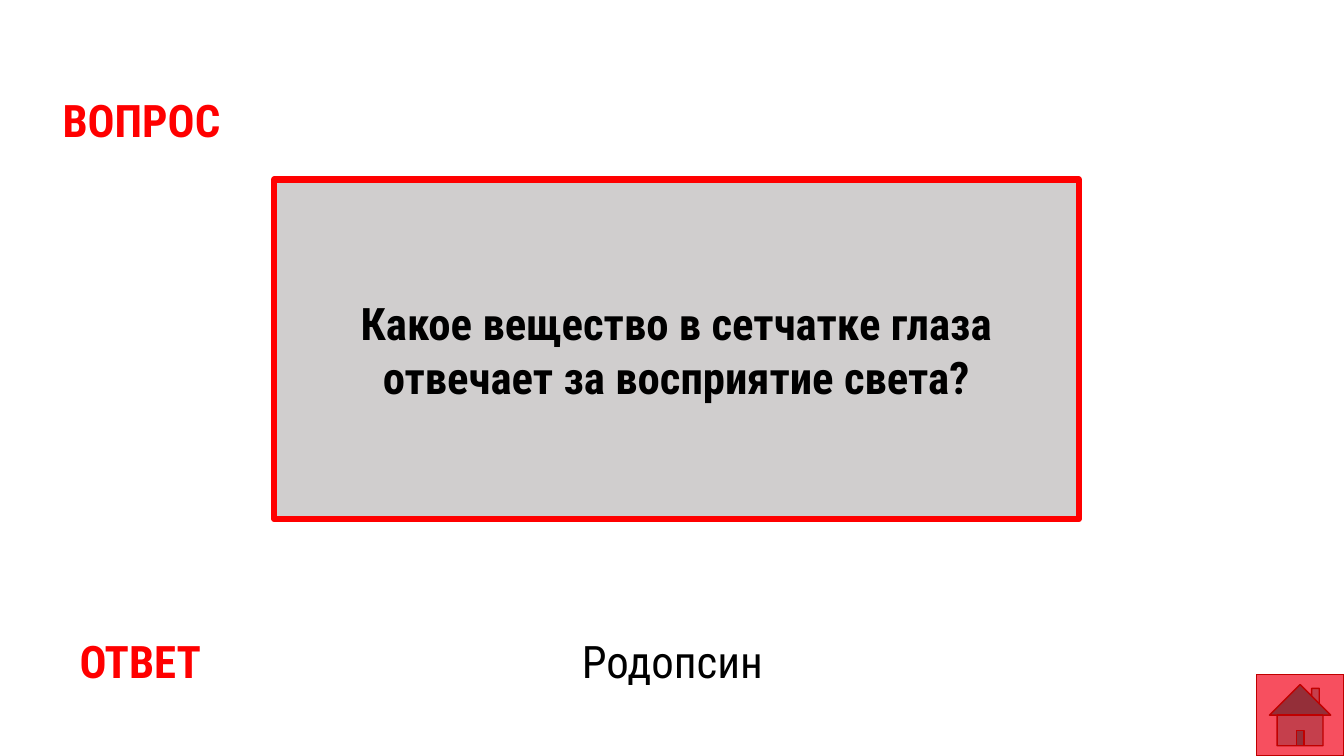
from pptx import Presentation
from pptx.dml.color import RGBColor
from pptx.enum.shapes import MSO_SHAPE as Shape
from pptx.enum.text import MSO_ANCHOR as Anchor, MSO_AUTO_SIZE as AutoSize, PP_ALIGN as Align
from pptx.util import Pt

PX = 9144  # 100 px to the inch
RED = RGBColor(0xFF, 0x00, 0x00)
DARK_RED = RGBColor(0xC0, 0x00, 0x00)
ROSE = RGBColor(0xF7, 0x4F, 0x5F)
GREY = RGBColor(0xD0, 0xCE, 0xCE)
BLACK = RGBColor(0x00, 0x00, 0x00)


def write(box, text, color, bold, align, anchor=Anchor.TOP):
    frame = box.text_frame
    frame.text = text
    frame.word_wrap = True
    frame.vertical_anchor = anchor
    paragraph = frame.paragraphs[0]
    paragraph.alignment = align
    font = paragraph.runs[0].font
    font.name = "Roboto Condensed"
    font.size = Pt(32)
    font.bold = bold
    font.color.rgb = color


def add_panel(kind, bounds, fill, line, line_width):
    panel = slide.shapes.add_shape(kind, *(n * PX for n in bounds))
    panel.shadow.inherit = False
    panel.fill.solid()
    panel.fill.fore_color.rgb = fill
    panel.line.color.rgb = line
    panel.line.width = Pt(line_width)
    return panel


prs = Presentation()
prs.slide_width = 1333 * PX
prs.slide_height = 750 * PX
slide = prs.slides.add_slide(prs.slide_layouts[5])

heading = slide.shapes.title
heading.left, heading.top, heading.width, heading.height = (n * PX for n in (52, 87, 518, 64))
write(heading, "ВОПРОС", RED, True, Align.LEFT)
heading.text_frame.auto_size = AutoSize.SHAPE_TO_FIT_TEXT

question = add_panel(Shape.RECTANGLE, (272, 178, 798, 337), GREY, RED, 4.5)
write(question, "Какое вещество в сетчатке глаза отвечает за восприятие света?",
      BLACK, True, Align.CENTER, Anchor.MIDDLE)

for text, left, width, color, bold, align in (
    ("ОТВЕТ", 69, 165, RED, True, Align.LEFT),
    ("Родопсин", 408, 518, BLACK, False, Align.CENTER),
):
    answer = slide.shapes.add_textbox(left * PX, 624 * PX, width * PX, 64 * PX)
    write(answer, text, color, bold, align)
    answer.text_frame.auto_size = AutoSize.SHAPE_TO_FIT_TEXT

add_panel(Shape.ACTION_BUTTON_HOME, (1246, 669, 87, 81), ROSE, DARK_RED, 1)

prs.save("out.pptx")
